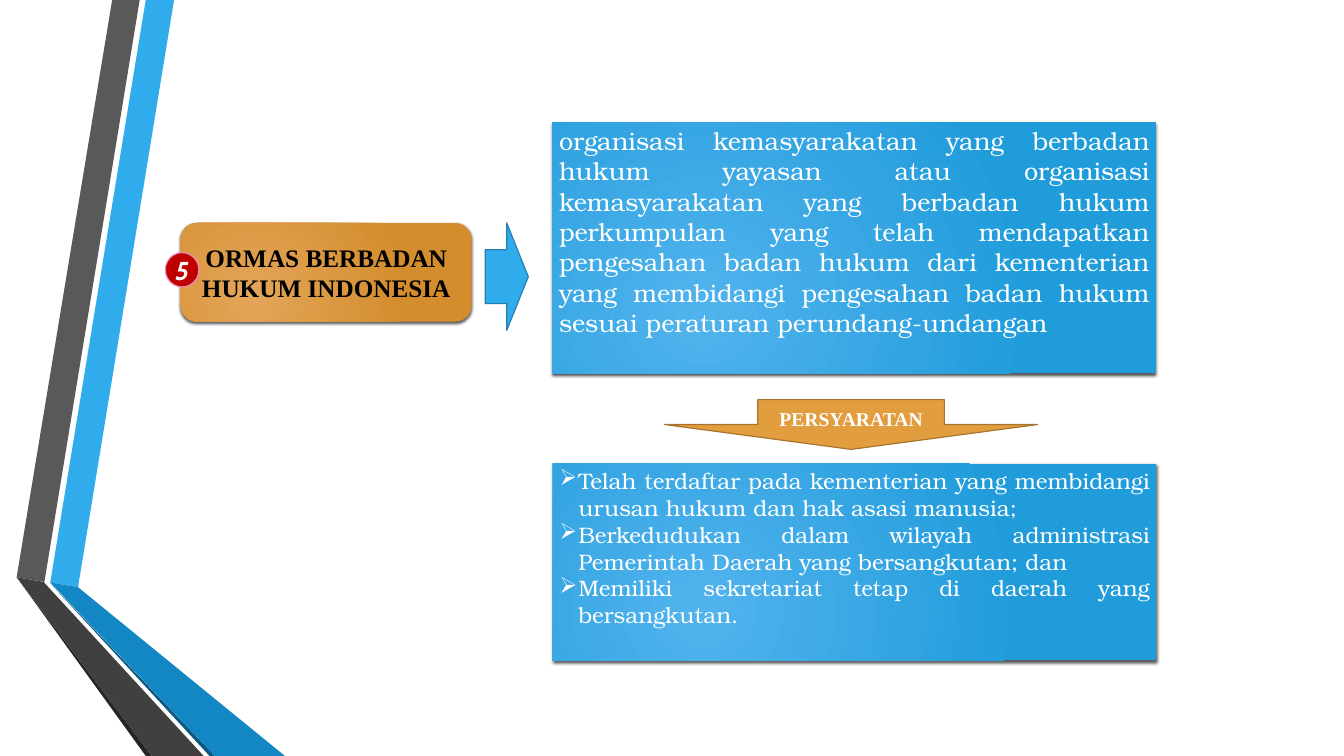
from lxml.etree import SubElement
from pptx import Presentation
from pptx.dml.color import RGBColor
from pptx.enum.shapes import MSO_SHAPE as SHAPE
from pptx.enum.text import MSO_ANCHOR as ANCHOR, PP_ALIGN as ALIGN
from pptx.oxml.ns import qn
from pptx.util import Cm, Pt

COLORS = {
    "blue": "30ACEC", "blue_low": "1287C3", "blue_edge": "0C5A82", "blue_line": "247FAF",
    "gray": "595959", "gray_low": "404040", "gray_edge": "262626",
    "panel_light": "51B3ED", "panel_dark": "219CDB",
    "gold": "E29D3E", "gold_line": "A7742E", "gold_light": "E4A559", "gold_dark": "D38D2D",
    "red": "C00000", "pink": "E691B7", "black": "000000", "white": "FFFFFF",
}
SERIF, BODY, BADGE = "Times New Roman", "TeX Gyre Bonum", "Cabin"
WIDTH, HEIGHT = 50.8, 28.58


def rgb(name):
    return RGBColor.from_string(COLORS[name])


def add_shape(s, kind, box, fill, line=None):
    sp = s.shapes.add_shape(kind, *(Cm(v) for v in box))
    sp.shadow.inherit = False
    sp.fill.solid()
    sp.fill.fore_color.rgb = rgb(fill)
    if line:
        sp.line.color.rgb = rgb(line)
        sp.line.width = Pt(1.25)
    else:
        sp.line.fill.background()
    return sp


def add_glow_shape(s, kind, box, light, dark):
    sp = add_shape(s, kind, box, light)
    sp.fill.gradient()
    for stop, color, position in zip(sp.fill.gradient_stops, (light, dark), (0, 1)):
        stop.color.rgb = rgb(color)
        stop.position = position
    grad = sp._element.spPr.find(qn("a:gradFill"))
    grad.remove(grad.find(qn("a:lin")))
    path = SubElement(grad, qn("a:path"), path="circle")
    SubElement(path, qn("a:fillToRect"), l="50000", t="100000", r="100000", b="50000")
    effects = sp._element.spPr.find(qn("a:effectLst"))
    shadow = SubElement(effects, qn("a:outerShdw"), blurRad=str(Pt(3)), dist=str(Pt(2)),
                        dir="5400000", algn="ctr", rotWithShape="0")
    color = SubElement(shadow, qn("a:srgbClr"), val=COLORS["black"])
    SubElement(color, qn("a:alpha"), val="64000")
    return sp


def write(sp, text, font, size, color, align=ALIGN.CENTER, anchor=ANCHOR.MIDDLE,
          bold=False, italic=False):
    tf = sp.text_frame
    tf.word_wrap = True
    tf.vertical_anchor = anchor
    tf.text = text
    for p in tf.paragraphs:
        p.alignment = align
        for r in p.runs:
            r.font.name, r.font.size = font, Pt(size)
            r.font.bold, r.font.italic = bold, italic
            r.font.color.rgb = rgb(color)
    return tf


def add_ribbons(s, x, y):
    bottom = HEIGHT
    ribbons = [
        ("blue", [(1.27, 22.02), (2.32, 22.2), (5.95, 0), (4.88, 0)]),
        ("gray", [(4.65, 0), (3.61, 0), (0, 21.82), (1.05, 22)]),
        ("gray_edge", [(0, 21.82), (4.88, bottom), (5.11, bottom)]),
        ("blue_edge", [(1.27, 22.05), (7.29, bottom), (7.5, bottom)]),
        ("blue_low", [(1.27, 22.02), (7.5, bottom), (10.14, bottom), (2.32, 22.2)]),
        ("gray_low", [(7.07, bottom), (1.22, 22.22), (1.02, 22), (0, 21.82), (5.11, bottom)]),
    ]
    for color, points in ribbons:
        start, *rest = [(Cm(x + dx), Cm(y + dy)) for dx, dy in points]
        builder = s.shapes.build_freeform(*start)
        builder.add_line_segments(rest, close=True)
        sp = builder.convert_to_shape()
        sp.shadow.inherit = False
        sp.fill.solid()
        sp.fill.fore_color.rgb = rgb(color)
        sp.line.fill.background()


def add_heading(s, x, y, w, h):
    sp = add_glow_shape(s, SHAPE.ROUNDED_RECTANGLE, (x, y, w, h), "gold_light", "gold_dark")
    write(sp, "ORMAS BERBADAN HUKUM INDONESIA", SERIF, 27, "black", bold=True)
    add_shape(s, SHAPE.RIGHT_ARROW, (x + w + 0.51, y, 1.63, 4.06), "blue", "blue_line")
    badge = add_shape(s, SHAPE.OVAL, (x - 0.58, y + 1.12, 1.27, 1.3), "red", "pink")
    tf = write(badge, "5", BADGE, 27.7, "white", bold=True, italic=True)
    tf.margin_left = tf.margin_right = tf.margin_top = tf.margin_bottom = 0


def add_panel(s, box, text, size):
    sp = add_glow_shape(s, SHAPE.RECTANGLE, box, "panel_light", "panel_dark")
    return write(sp, text, BODY, size, "white", ALIGN.JUSTIFY, ANCHOR.TOP)


def add_requirements(s, x, y, w, h):
    arrow = add_shape(s, SHAPE.DOWN_ARROW, (x + 4.22, y - 2.42, 14.1, 1.88), "gold", "gold_line")
    tf = write(arrow, "PERSYARATAN", SERIF, 21, "white", bold=True)
    tf.margin_top = tf.margin_bottom = 0
    items = [
        "Telah terdaftar pada kementerian yang membidangi urusan hukum dan hak asasi manusia;",
        "Berkedudukan dalam wilayah administrasi Pemerintah Daerah yang bersangkutan; dan",
        "Memiliki sekretariat tetap di daerah yang bersangkutan.",
    ]
    for p in add_panel(s, (x, y, w, h), "\n".join(items), 24).paragraphs:
        pPr = p._p.get_or_add_pPr()
        pPr.set("marL", str(Cm(0.71)))
        pPr.set("indent", str(-Cm(0.71)))
        SubElement(pPr, qn("a:buChar"), char="➢")


def main():
    prs = Presentation()
    prs.slide_width, prs.slide_height = Cm(WIDTH), Cm(HEIGHT)
    s = prs.slides.add_slide(prs.slide_layouts[6])
    add_ribbons(s, 0.63, 0)
    add_heading(s, 6.83, 8.43, 11, 3.73)
    definition = (
        "organisasi kemasyarakatan yang berbadan hukum yayasan atau organisasi "
        "kemasyarakatan yang berbadan hukum perkumpulan yang telah mendapatkan "
        "pengesahan badan hukum dari kementerian yang membidangi pengesahan badan "
        "hukum sesuai peraturan perundang-undangan"
    )
    add_panel(s, (20.88, 4.62, 22.81, 9.5), definition, 27)
    add_requirements(s, 20.9, 17.53, 22.81, 7.44)
    prs.save("out.pptx")


if __name__ == "__main__":
    main()
